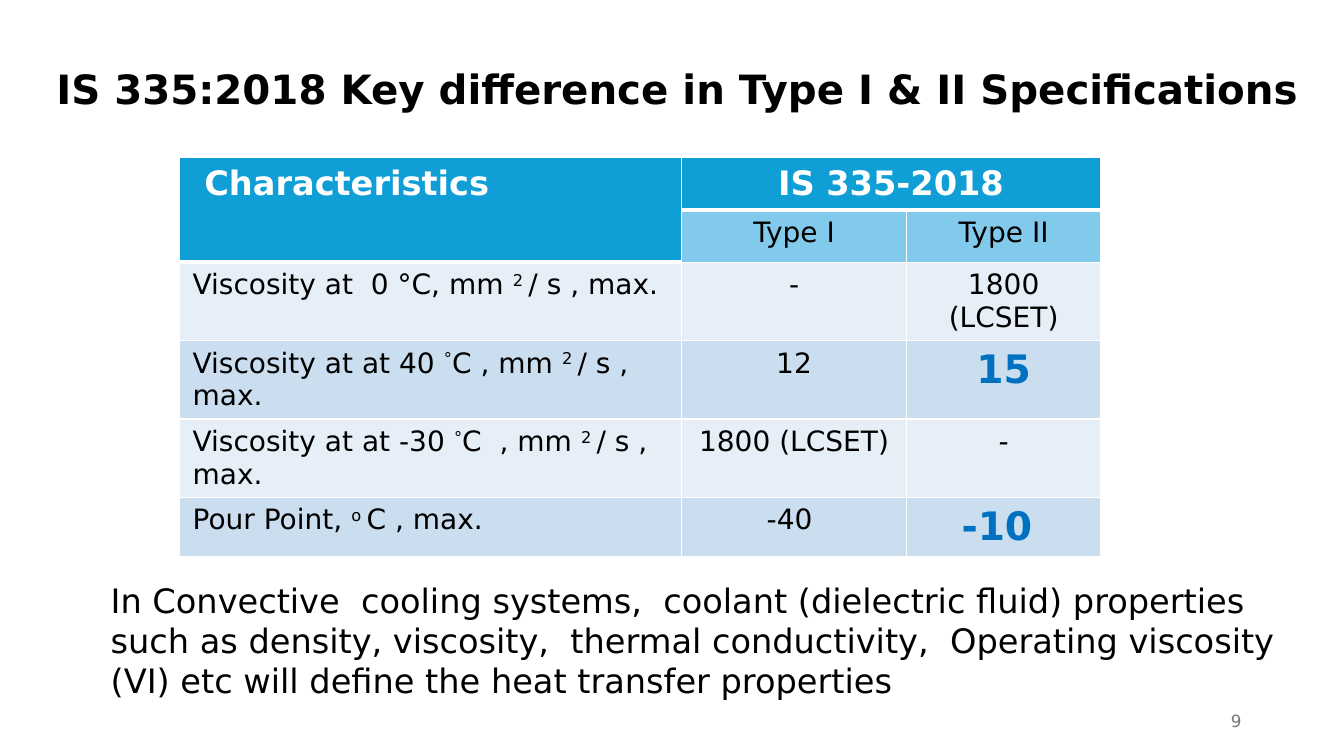
from dataclasses import dataclass

from lxml import etree
from pptx import Presentation
from pptx.dml.color import RGBColor
from pptx.enum.text import MSO_ANCHOR, MSO_AUTO_SIZE, PP_ALIGN
from pptx.oxml.ns import qn
from pptx.util import Pt

LEFT, CENTER, RIGHT = PP_ALIGN.LEFT, PP_ALIGN.CENTER, PP_ALIGN.RIGHT
TOP, MIDDLE = MSO_ANCHOR.TOP, MSO_ANCHOR.MIDDLE
NO_AUTOFIT = MSO_AUTO_SIZE.NONE
TITLE_ONLY = 5


@dataclass(frozen=True)
class Theme:
    font: str = "DejaVu Sans"
    black: str = "000000"
    white: str = "FFFFFF"
    grey: str = "757575"
    highlight: str = "0070C0"
    header: str = "0F9ED5"
    subheader: str = "82CAEB"
    bands: tuple = ("E6EFF7", "CADEEF")
    title_size: float = 28.8
    highlight_size: float = 28
    large_size: float = 24
    body_size: float = 20
    number_size: float = 12


class SlideBuilder:
    def __init__(self, slide, theme):
        self.slide = slide
        self.theme = theme

    def add_runs(self, frame, text, size, color, bold=False, align=LEFT):
        """Fill one paragraph; text between carets is superscript."""
        paragraph = frame.paragraphs[0]
        paragraph.alignment = align
        for index, part in enumerate(text.split("^")):
            run = paragraph.add_run()
            run.text = part
            run.font.name = self.theme.font
            run.font.size = Pt(size)
            run.font.bold = bold
            run.font.color.rgb = RGBColor.from_string(color)
            if index % 2:
                run.font._element.set("baseline", "30000")
        return paragraph

    def title(self, text, left, top, width, height):
        heading = self.slide.shapes.title
        heading.left, heading.top = Pt(left), Pt(top)
        heading.width, heading.height = Pt(width), Pt(height)
        frame = heading.text_frame
        frame.auto_size = NO_AUTOFIT
        frame.word_wrap = True
        frame.vertical_anchor = MIDDLE
        paragraph = self.add_runs(frame, text, self.theme.title_size, self.theme.black, True)
        paragraph.line_spacing = 0.9

    def text(self, text, left, top, width, height, size, color, align=LEFT, anchor=TOP):
        box = self.slide.shapes.add_textbox(Pt(left), Pt(top), Pt(width), Pt(height))
        frame = box.text_frame
        frame.word_wrap = True
        frame.vertical_anchor = anchor
        self.add_runs(frame, text, size, color, align=align)

    def table(self, left, top, widths, heights):
        frame = self.slide.shapes.add_table(
            len(heights), len(widths), Pt(left), Pt(top), Pt(sum(widths)), Pt(sum(heights)))
        table = frame.table
        table.first_row = table.horz_banding = False
        for column, width in zip(table.columns, widths):
            column.width = Pt(width)
        for row, height in zip(table.rows, heights):
            row.height = Pt(height)
        return table

    def cell(self, cell, text, fill, size, color, bold=False, align=CENTER, bottom=1):
        cell.margin_left = cell.margin_right = Pt(9.36)
        cell.margin_top = cell.margin_bottom = Pt(4.68)
        properties = cell._tc.get_or_add_tcPr()
        for side, width in (("L", 1), ("R", 1), ("T", 1), ("B", bottom)):
            line = etree.SubElement(properties, qn(f"a:ln{side}"), w=str(Pt(width)))
            solid = etree.SubElement(line, qn("a:solidFill"))
            etree.SubElement(solid, qn("a:srgbClr"), val=self.theme.white)
        cell.fill.solid()
        cell.fill.fore_color.rgb = RGBColor.from_string(fill)
        if text:
            self.add_runs(cell.text_frame, text, size, color, bold, align)


# Header cells: row, column, text, alignment
HEADERS = [
    (0, 0, " Characteristics", LEFT),
    (0, 1, "IS 335-2018", CENTER),
    (0, 2, "", CENTER),
    (1, 0, "", LEFT),
]
TYPES = ["Type I", "Type II"]

CHARACTERISTICS = [
    ("Viscosity at  0 °C, mm ^2 ^/ s , max.", "-", "1800 (LCSET)"),
    ("Viscosity at at 40 ^°^C , mm ^2 ^/ s , max.", "12", "15"),
    ("Viscosity at at -30 ^°^C  , mm ^2 ^/ s , max.", "1800 (LCSET)", "-"),
    ("Pour Point, ^o ^C , max.", "-40 ", "-10 "),
]
HIGHLIGHTED = {"15", "-10 "}

COOLING_NOTE = (
    "In Convective  cooling systems,  coolant (dielectric fluid) properties such as "
    "density, viscosity,  thermal conductivity,  Operating viscosity (VI) etc will "
    "define the heat transfer properties")


def main():
    theme = Theme()
    deck = Presentation()
    deck.slide_width, deck.slide_height = Pt(960), Pt(540)
    slide = deck.slides.add_slide(deck.slide_layouts[TITLE_ONLY])
    builder = SlideBuilder(slide, theme)

    # Title
    builder.title("IS 335:2018 Key difference in Type I & II Specifications",
                  33, 29, 914, 73)

    # Table header
    specifications = builder.table(128.2, 112.5, [358.5, 161, 138.5],
                                   [37, 37.5, 56, 56, 56, 42])
    specifications.cell(0, 0).merge(specifications.cell(1, 0))
    specifications.cell(0, 1).merge(specifications.cell(0, 2))
    for row, column, text, align in HEADERS:
        builder.cell(specifications.cell(row, column), text, theme.header,
                     theme.large_size, theme.white, True, align, bottom=3)
    for column, text in enumerate(TYPES, start=1):
        builder.cell(specifications.cell(1, column), text, theme.subheader,
                     theme.body_size, theme.black)

    # Table body
    for index, values in enumerate(CHARACTERISTICS):
        for column, text in enumerate(values):
            marked = text in HIGHLIGHTED
            builder.cell(specifications.cell(index + 2, column), text,
                         theme.bands[index % 2],
                         theme.highlight_size if marked else theme.body_size,
                         theme.highlight if marked else theme.black,
                         marked, CENTER if column else LEFT)

    # Cooling note and page number
    builder.text(COOLING_NOTE, 72, 410.5, 852.5, 94.5, theme.large_size, theme.black)
    builder.text("9", 678, 500.5, 216, 28.75, theme.number_size, theme.grey, RIGHT, MIDDLE)

    deck.save("out.pptx")


if __name__ == "__main__":
    main()
